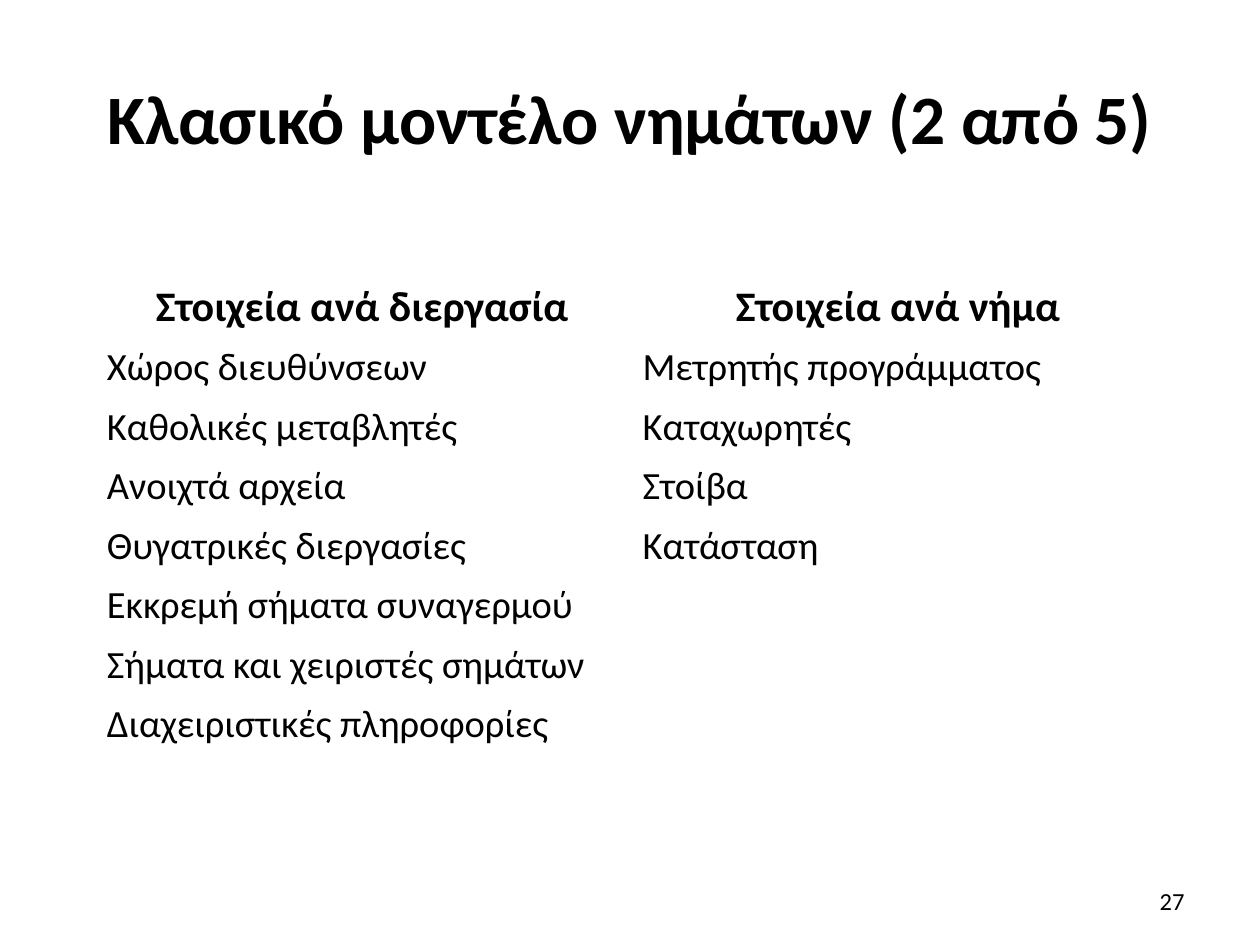
from dataclasses import dataclass
from itertools import zip_longest

from pptx import Presentation
from pptx.dml.color import RGBColor
from pptx.enum import text
from pptx.util import Cm, Pt


@dataclass(frozen=True)
class Theme:
    font: str = "Calibri"
    ink: RGBColor = RGBColor(0, 0, 0)
    title: float = 39.6
    heading: float = 24
    body: float = 22
    page: float = 14


class SlideBuilder:
    def __init__(self, slide, theme):
        self.slide = slide
        self.theme = theme

    def set_text(self, frame, wording, size, align, bold=False):
        paragraph = frame.paragraphs[0]
        paragraph.text = wording
        paragraph.alignment = align
        font = paragraph.font
        font.name, font.size, font.bold = self.theme.font, Pt(size), bold
        font.color.rgb = self.theme.ink

    def label(self, wording, box, size, align, bold=False):
        frame = self.slide.shapes.add_textbox(*map(Cm, box)).text_frame
        frame.word_wrap = True
        frame.vertical_anchor = text.MSO_ANCHOR.MIDDLE
        self.set_text(frame, wording, size, align, bold)

    def plain_table(self, columns, left, top, width, row_height):
        """Draw unfilled columns, each given as heading -> list of entries."""
        rows = [tuple(columns), *zip_longest(*columns.values(), fillvalue="")]
        table = self.slide.shapes.add_table(
            len(rows), len(columns), Cm(left), Cm(top),
            Cm(width), Cm(row_height * len(rows))).table
        table.first_row = table.horz_banding = False
        for r, row in enumerate(rows):
            for c, wording in enumerate(row):
                cell = table.cell(r, c)
                cell.fill.background()
                if r == 0:
                    self.set_text(cell.text_frame, wording, self.theme.heading,
                                  text.PP_ALIGN.CENTER, bold=True)
                elif wording:
                    cell.vertical_anchor = text.MSO_ANCHOR.MIDDLE
                    self.set_text(cell.text_frame, wording, self.theme.body,
                                  text.PP_ALIGN.LEFT)


def main():
    deck = Presentation()
    deck.slide_width, deck.slide_height = Cm(25.4), Cm(19.05)
    theme = Theme()
    builder = SlideBuilder(deck.slides.add_slide(deck.slide_layouts[6]), theme)

    builder.label("Κλασικό μοντέλο νημάτων (2 από 5)", (1.27, 0.76, 22.86, 3.18),
                  theme.title, text.PP_ALIGN.CENTER, bold=True)
    thread_model = {
        "Στοιχεία ανά διεργασία": [
            "Χώρος διευθύνσεων",
            "Καθολικές μεταβλητές",
            "Ανοιχτά αρχεία",
            "Θυγατρικές διεργασίες",
            "Εκκρεμή σήματα συναγερμού",
            "Σήματα και χειριστές σημάτων",
            "Διαχειριστικές πληροφορίες",
        ],
        "Στοιχεία ανά νήμα": [
            "Μετρητής προγράμματος",
            "Καταχωρητές",
            "Στοίβα",
            "Κατάσταση",
        ],
    }
    builder.plain_table(thread_model, left=1.9, top=5.54, width=21.6, row_height=1.2)
    builder.label("27", (18.2, 17.66, 5.93, 1.01), theme.page, text.PP_ALIGN.RIGHT)

    deck.save("out.pptx")


if __name__ == "__main__":
    main()
